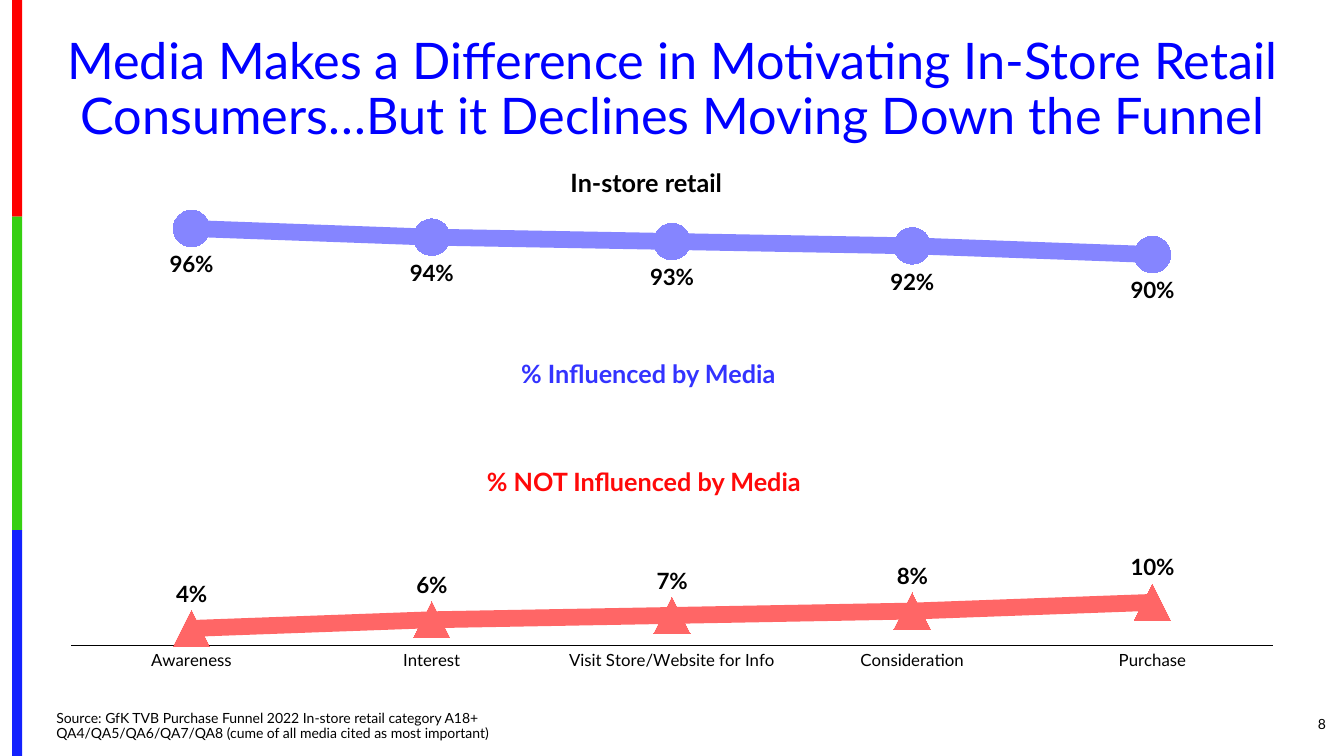
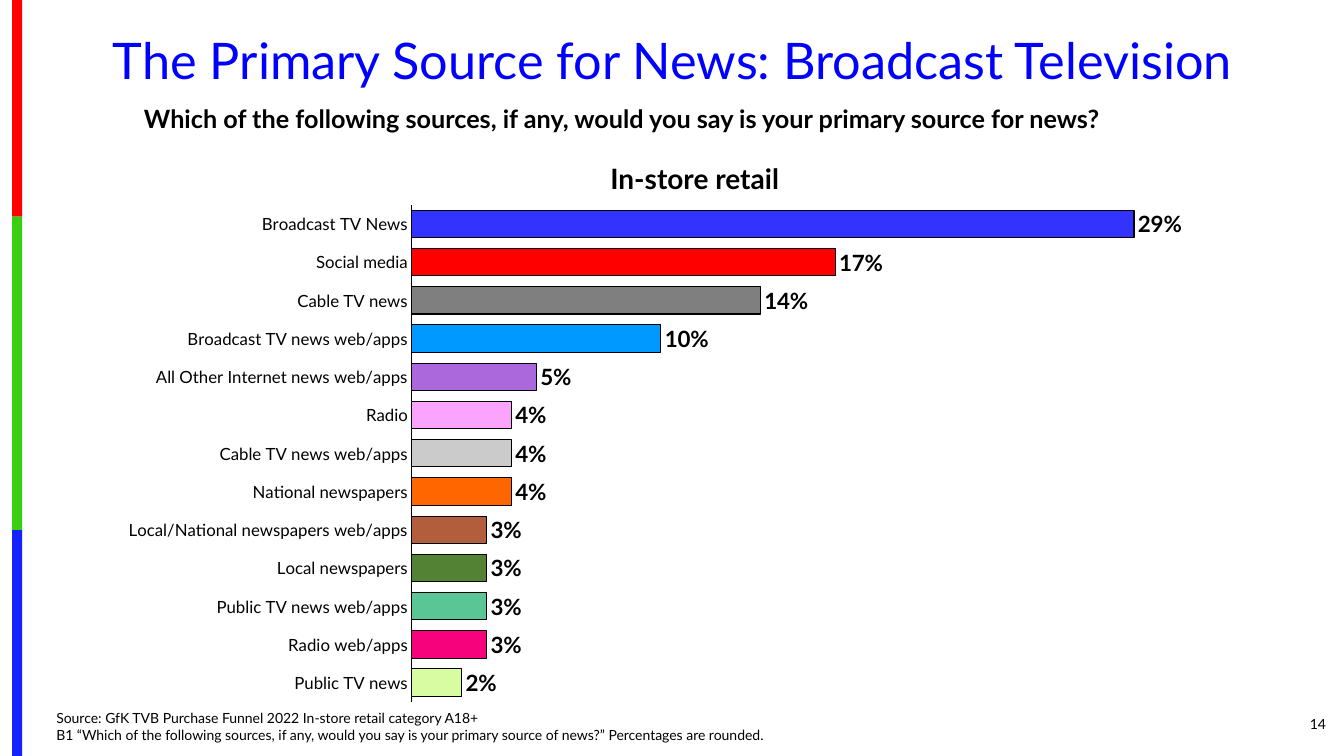
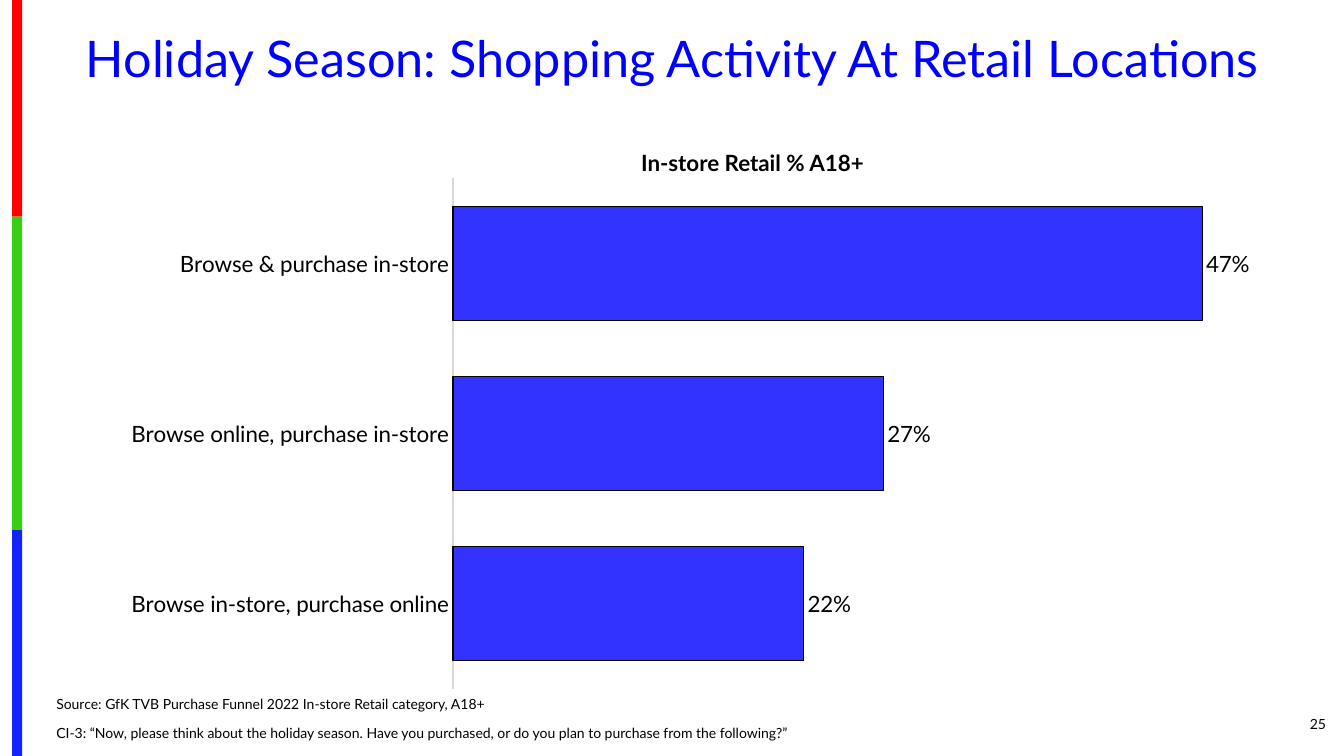
import pptx
import pptx.chart.data
import pptx.dml.color
import pptx.enum.chart
import pptx.enum.shapes
import pptx.enum.text
import pptx.oxml
import pptx.oxml.ns
import pptx.util

Inches = pptx.util.Inches
Pt = pptx.util.Pt
Align = pptx.enum.text.PP_ALIGN
Anchor = pptx.enum.text.MSO_ANCHOR
ChartType = pptx.enum.chart.XL_CHART_TYPE
LabelPosition = pptx.enum.chart.XL_LABEL_POSITION
Marker = pptx.enum.chart.XL_MARKER_STYLE

FONT = "Lato"
BLACK = "000000"
TITLE_BLUE = "0000FF"
BLUE = "3333FF"
RED = "FF0909"
PALE_BLUE = "8585FF"
PALE_RED = "FF6666"
AXIS_GREY = "D9D9D9"
BAND_X, BAND_WIDTH = 0.12, 0.1
BANDS = [("FE0000", 2.15), ("36CF12", 3.11), ("1322FE", 2.24)]

NEWS_SOURCES = [
    ("Broadcast TV News", 0.29, BLUE),
    ("Social media", 0.17, "FF0000"),
    ("Cable TV news", 0.14, "7F7F7F"),
    ("Broadcast TV news web/apps", 0.10, "0099FF"),
    ("All Other Internet news web/apps", 0.05, "AA68DC"),
    ("Radio", 0.04, "FAA4FF"),
    ("Cable TV news web/apps", 0.04, "CBCBCB"),
    ("National newspapers", 0.04, "FF6600"),
    ("Local/National newspapers web/apps", 0.03, "B25D3C"),
    ("Local newspapers", 0.03, "548234"),
    ("Public TV news web/apps", 0.03, "5AC695"),
    ("Radio web/apps", 0.03, "F5027C"),
    ("Public TV news", 0.02, "D7FCA1"),
]


def rgb(value):
    return pptx.dml.color.RGBColor.from_string(value)


def fill_solid(item, color):
    item.fill.solid()
    item.fill.fore_color.rgb = rgb(color)


def set_line(line, color, width):
    line.color.rgb = rgb(color)
    line.width = Pt(width)


def set_font(font, size, color=BLACK, bold=False):
    font.name = FONT
    font.size = Pt(size)
    font.bold = bold
    font.color.rgb = rgb(color)


def write(shape, paragraphs, size, color=BLACK, bold=False, align=Align.LEFT,
          anchor=Anchor.TOP, spacing=1.0):
    """Fill a shape with paragraphs, each a list of lines."""
    frame = shape.text_frame
    frame.word_wrap = True
    frame.auto_size = pptx.enum.text.MSO_AUTO_SIZE.NONE
    frame.vertical_anchor = anchor
    for index, lines in enumerate(paragraphs):
        para = frame.add_paragraph() if index else frame.paragraphs[0]
        para.alignment = align
        para.line_spacing = spacing
        if index:
            para.space_before = Pt(10)
        for number, line in enumerate(lines):
            if number:
                para.add_line_break()
            span = para.add_run()
            span.text = line
            set_font(span.font, size, color, bold)


def add_text(page, box, paragraphs, size, **style):
    shape = page.shapes.add_textbox(*map(Inches, box))
    write(shape, paragraphs, size, **style)


def add_label(page, box, text, size=18, **style):
    add_text(page, box, [[text]], size, bold=True, **style)


def add_bands(page):
    top = 0
    for color, height in BANDS:
        band = page.shapes.add_shape(
            pptx.enum.shapes.MSO_SHAPE.RECTANGLE,
            Inches(BAND_X), Inches(top), Inches(BAND_WIDTH), Inches(height))
        band.shadow.inherit = False
        fill_solid(band, color)
        band.line.fill.background()
        top += height


def add_page(deck, title, title_box, number, source, source_box, source_spacing=0.9):
    """Add a slide with everything the slides share."""
    page = deck.slides.add_slide(deck.slide_layouts[5])
    add_bands(page)
    heading = page.shapes.title
    heading.left, heading.top, heading.width, heading.height = map(Inches, title_box)
    write(heading, [[title]], 36, color=TITLE_BLUE, align=Align.CENTER, spacing=0.9)
    add_text(page, (12.17, 6.98, 1.08, 0.4), [[number]], 10,
             align=Align.RIGHT, anchor=Anchor.MIDDLE)
    add_text(page, source_box, source, 10, anchor=Anchor.BOTTOM, spacing=source_spacing)
    return page


def add_percent_chart(page, box, kind, categories, value_rows, maximum,
                      axis_size=12, axis_color=BLACK):
    """Add a chart with a plain category axis and a hidden value axis."""
    data = pptx.chart.data.CategoryChartData(number_format="0%")
    data.categories = categories
    for index, values in enumerate(value_rows, 1):
        data.add_series(f"Series {index}", values)
    chart = page.shapes.add_chart(kind, *map(Inches, box), data).chart
    chart.has_title = False
    chart.has_legend = False
    set_font(chart.font, 10)
    chart.plots[0].vary_by_categories = False

    values = chart.value_axis
    values.visible = False
    values.has_major_gridlines = False
    values.minimum_scale = 0
    values.maximum_scale = maximum

    names = chart.category_axis
    names.major_tick_mark = pptx.enum.chart.XL_TICK_MARK.NONE
    set_font(names.tick_labels.font, axis_size)
    set_line(names.format.line, axis_color, 0.75)
    return chart


def show_values(series, position, bold=True):
    labels = series.data_labels
    labels.show_value = True
    labels.number_format = "0%"
    labels.number_format_is_linked = False
    labels.position = position
    set_font(labels.font, 16, bold=bold)


def set_plot_area(chart, area):
    """Fix the inner plot area, given as x, y, w, h fractions of the chart."""
    plot_area = chart.element.find(".//" + pptx.oxml.ns.qn("c:plotArea"))
    for layout in plot_area.findall(pptx.oxml.ns.qn("c:layout")):
        plot_area.remove(layout)
    edges = "".join(f'<c:{edge}Mode val="edge"/>' for edge in "xy")
    sizes = "".join(f'<c:{name} val="{value}"/>' for name, value in zip("xywh", area))
    plot_area.insert(0, pptx.oxml.parse_xml(
        f'<c:layout {pptx.oxml.ns.nsdecls("c")}><c:manualLayout>'
        f'<c:layoutTarget val="inner"/>{edges}{sizes}</c:manualLayout></c:layout>'))


def add_bar_chart(page, box, categories, values, maximum, gap, area,
                  bold=True, **axis):
    chart = add_percent_chart(page, box, ChartType.BAR_CLUSTERED, categories,
                              [values], maximum, **axis)
    set_plot_area(chart, area)
    chart.plots[0].gap_width = gap
    bars = chart.series[0]
    bars.invert_if_negative = False
    fill_solid(bars.format, BLUE)
    set_line(bars.format.line, BLACK, 0.75)
    show_values(bars, LabelPosition.OUTSIDE_END, bold)
    return chart


def add_funnel_chart(page, box):
    stages = ["Awareness", "Interest", "Visit Store/Website for Info",
              "Consideration", "Purchase"]
    influenced = [0.96, 0.94, 0.93, 0.92, 0.9]
    not_influenced = [0.04, 0.06, 0.07, 0.08, 0.1]
    chart = add_percent_chart(page, box, ChartType.LINE_MARKERS, stages,
                              [influenced, not_influenced], 1)
    styles = [(PALE_BLUE, Marker.CIRCLE, LabelPosition.BELOW),
              (PALE_RED, Marker.TRIANGLE, LabelPosition.ABOVE)]
    for series, (color, marker, position) in zip(chart.series, styles):
        series.smooth = False
        set_line(series.format.line, color, 12)
        series.marker.style = marker
        series.marker.size = 26
        fill_solid(series.marker.format, color)
        series.marker.format.line.fill.background()
        show_values(series, position)


def build_funnel_page(deck):
    page = add_page(
        deck,
        "Media Makes a Difference in Motivating In-Store Retail Consumers…"
        "But it Declines Moving Down the Funnel",
        (0.46, 0.31, 12.42, 1.19), "8",
        [["Source: GfK TVB Purchase Funnel 2022 In-store retail category A18+",
          "QA4/QA5/QA6/QA7/QA8 (cume of all media cited as most important)"]],
        (0.46, 7.01, 9.45, 0.4))
    add_funnel_chart(page, (0.46, 2, 12.41, 4.74))
    add_label(page, (5.07, 3.51, 3.17, 0.4), "% Influenced by Media", color=BLUE)
    add_label(page, (4.73, 4.58, 3.78, 0.4), "% NOT Influenced by Media", color=RED)
    add_label(page, (5.56, 1.61, 1.98, 0.4), "In-store retail")


def build_news_page(deck):
    page = add_page(
        deck, "The Primary Source for News: Broadcast Television",
        (0.46, 0.31, 12.42, 0.65), "14",
        [["Source: GfK TVB Purchase Funnel 2022 In-store retail category A18+",
          "B1 “Which of the following sources, if any, would you say is your primary "
          "source of news?” Percentages are rounded."]],
        (0.46, 6.98, 9.45, 0.44), source_spacing=1.0)
    add_label(page, (1.33, 0.98, 11.14, 0.4),
              "Which of the following sources, if any, would you say is your "
              "primary source for news?")
    names, values, colors = zip(*NEWS_SOURCES)
    chart = add_bar_chart(page, (0.25, 1.37, 13, 5.61), names, values, 0.35, 40,
                          (0.295, 0.118, 0.665, 0.879))
    chart.category_axis.reverse_order = True
    for index, color in enumerate(colors):
        bar = chart.series[0].points[index].format
        fill_solid(bar, color)
        set_line(bar.line, BLACK, 0.75)
    add_label(page, (5.8, 1.55, 2.18, 0.44), "In-store retail", 20, align=Align.CENTER)


def build_holiday_page(deck):
    page = add_page(
        deck, "Holiday Season: Shopping Activity At Retail Locations",
        (0.46, 0.29, 12.42, 0.65), "25",
        [["Source: GfK TVB Purchase Funnel 2022 In-store Retail category, A18+"],
         ["CI-3: “Now, please think about the holiday season. Have you purchased, "
          "or do you plan to purchase from the following?”"]],
        (0.46, 6.87, 9.45, 0.54))
    activities = ["Browse in-store, purchase online",
                  "Browse online, purchase in-store",
                  "Browse & purchase in-store"]
    add_bar_chart(page, (0.46, 1.62, 12.41, 5.37), activities, [0.22, 0.27, 0.47],
                  0.5, 49, (0.325, 0.028, 0.637, 0.943), bold=False,
                  axis_size=16, axis_color=AXIS_GREY)
    add_label(page, (6.26, 1.43, 2.88, 0.37), "In-store Retail % A18+", 16)


def main():
    deck = pptx.Presentation()
    deck.slide_width = Inches(13.33)
    deck.slide_height = Inches(7.5)
    build_funnel_page(deck)
    build_news_page(deck)
    build_holiday_page(deck)
    deck.save("out.pptx")


if __name__ == "__main__":
    main()
